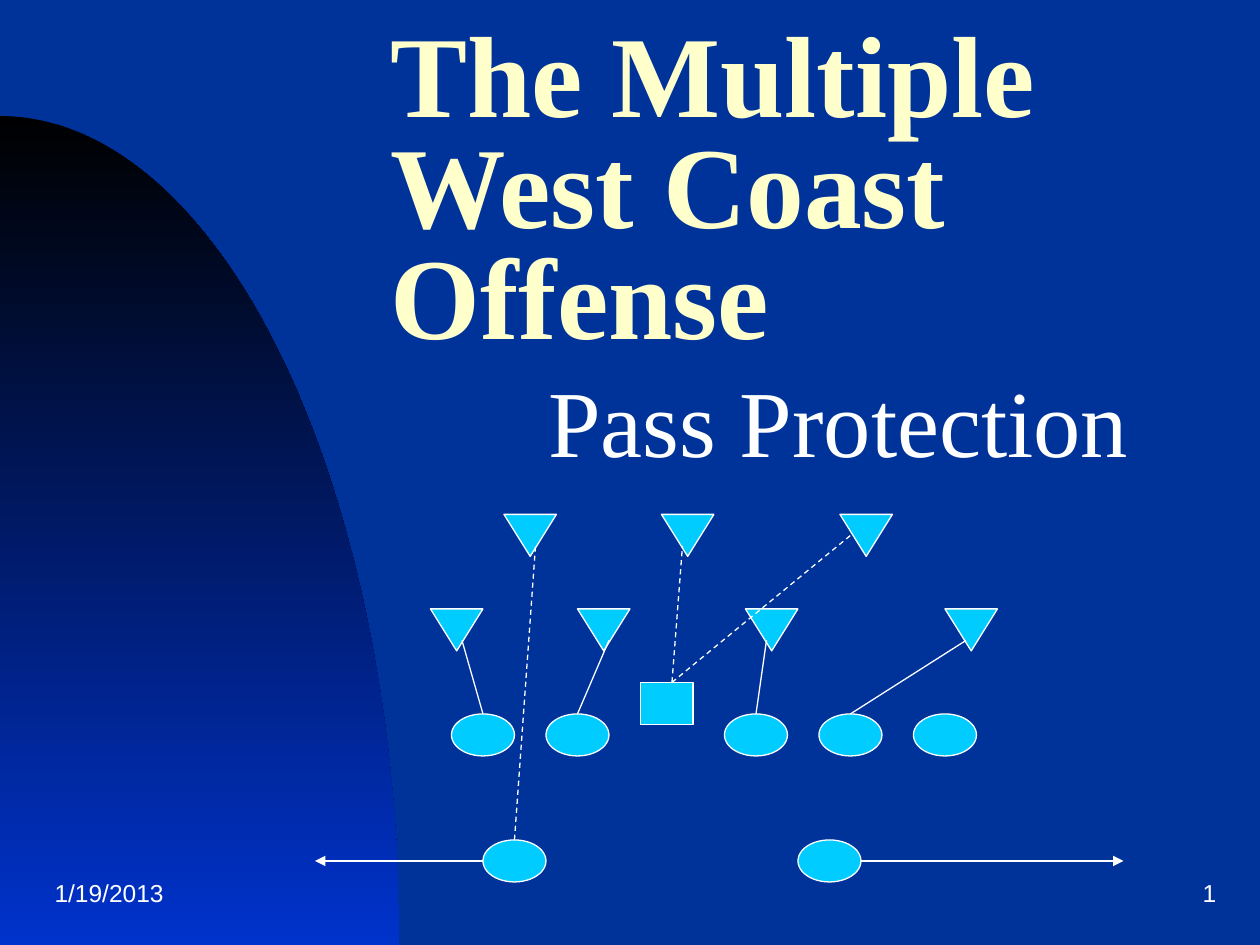
import dataclasses
import math

import pptx
import pptx.dml.color
import pptx.enum.dml
import pptx.enum.shapes
import pptx.enum.text
import pptx.oxml.ns
import pptx.util
from lxml import etree

Cm = pptx.util.Cm
Pt = pptx.util.Pt
Preset = pptx.enum.shapes.MSO_SHAPE
Align = pptx.enum.text.PP_ALIGN
Anchor = pptx.enum.text.MSO_ANCHOR
STEP = 2.54 / 12


@dataclasses.dataclass(frozen=True)
class Theme:
    """Colours, fonts and sizes of the deck."""
    background: str = "003399"
    glow_top: str = "000000"
    glow_bottom: str = "0033CC"
    title: str = "FFFFCC"
    text: str = "FFFFFF"
    player: str = "00CCFF"
    serif: str = "Times New Roman"
    sans: str = "Arial"
    title_size: float = 66
    subtitle_size: float = 54
    footer_size: float = 14
    thin: float = 0.75
    thick: float = 1.5


THEME = Theme()


def rgb(value):
    """Turn a hex string into a colour."""
    return pptx.dml.color.RGBColor.from_string(value)


def place(shape, box):
    """Move a shape to a box given in centimetres."""
    shape.left, shape.top, shape.width, shape.height = map(Cm, box)


def write(shape, text, font, size, color, align=Align.LEFT, anchor=Anchor.TOP, bold=False):
    """Write one formatted run and return its paragraph."""
    frame = shape.text_frame
    frame.word_wrap = True
    frame.auto_size = pptx.enum.text.MSO_AUTO_SIZE.NONE
    frame.vertical_anchor = anchor
    paragraph = frame.paragraphs[0]
    paragraph.alignment = align
    run = paragraph.add_run()
    run.text = text
    run.font.name, run.font.size, run.font.bold = font, Pt(size), bold
    run.font.color.rgb = rgb(color)
    return paragraph


def add_glow(slide, box, segments=90):
    """Draw the quarter ellipse with its vertical gradient."""
    left, top, width, height = box
    bottom = top + height
    angles = [math.pi / 2 * index / segments for index in range(segments + 1)]
    points = [(Cm(left + width * math.sin(angle)), Cm(bottom - height * math.cos(angle)))
              for angle in angles]
    builder = slide.shapes.build_freeform(*points[0])
    builder.add_line_segments(points[1:] + [(Cm(left), Cm(bottom))], close=True)
    glow = builder.convert_to_shape()
    glow.shadow.inherit = False
    glow.line.fill.background()
    glow.fill.gradient()
    glow.fill.gradient_angle = 270
    for stop, color in zip(glow.fill.gradient_stops, (THEME.glow_top, THEME.glow_bottom)):
        stop.color.rgb = rgb(color)


def add_headings(slide, title_box, subtitle_box):
    """Fill the title and subtitle placeholders."""
    title, subtitle = slide.shapes.title, slide.placeholders[1]
    place(title, title_box)
    place(subtitle, subtitle_box)
    paragraph = write(title, "The Multiple West Coast Offense", THEME.serif, THEME.title_size,
                      THEME.title, anchor=Anchor.BOTTOM, bold=True)
    paragraph.line_spacing = 0.8
    paragraph = write(subtitle, "Pass Protection", THEME.serif, THEME.subtitle_size, THEME.text)
    paragraph.space_before = Pt(THEME.subtitle_size * 0.2)


def add_footer(slide, box, width=5.29):
    """Put the date at the left of the box and the slide number at the right."""
    left, top, full_width, height = box
    for text, offset, align in (("1/19/2013", 0, Align.LEFT), ("1", full_width - width, Align.RIGHT)):
        label = slide.shapes.add_textbox(Cm(left + offset), Cm(top), Cm(width), Cm(height))
        write(label, text, THEME.sans, THEME.footer_size, THEME.text, align, Anchor.MIDDLE)


def add_player(slide, preset, origin, column, row):
    """Add one player at a grid position of the field."""
    columns = 6 if preset == Preset.OVAL else 5
    player = slide.shapes.add_shape(preset, 0, 0, 0, 0)
    place(player, (origin[0] + column * STEP, origin[1] + row * STEP, columns * STEP, 4 * STEP))
    player.shadow.inherit = False
    player.fill.solid()
    player.fill.fore_color.rgb = rgb(THEME.player)
    player.line.color.rgb = rgb(THEME.text)
    player.line.width = Pt(THEME.thin)
    if preset == Preset.ISOSCELES_TRIANGLE:
        player.element.spPr.find(pptx.oxml.ns.qn("a:xfrm")).set("flipV", "1")
    return player


def add_route(slide, origin, start, end, blocker=None, dashed=False, arrow=False):
    """Add an assignment line between two grid positions of the field."""
    ends = [Cm(origin[axis] + point[axis] * STEP) for point in (start, end) for axis in (0, 1)]
    route = slide.shapes.add_connector(pptx.enum.shapes.MSO_CONNECTOR.STRAIGHT, *ends)
    if blocker is not None:
        route.begin_connect(blocker, 0)
    route.line.color.rgb = rgb(THEME.text)
    route.line.width = Pt(THEME.thick if arrow else THEME.thin)
    if dashed:
        route.line.dash_style = pptx.enum.dml.MSO_LINE.DASH
    if arrow:
        tail = etree.SubElement(route.line._get_or_add_ln(), pptx.oxml.ns.qn("a:tailEnd"))
        tail.set("type", "triangle")
    etree.SubElement(route.element.spPr, pptx.oxml.ns.qn("a:effectLst"))


def add_play(slide, origin):
    """Draw the pass protection diagram from its top left corner."""
    rows = (
        (Preset.ISOSCELES_TRIANGLE, 0, (18, 33, 50)),
        (Preset.ISOSCELES_TRIANGLE, 9, (11, 25, 41, 60)),
        (Preset.RECTANGLE, 16, (31,)),
        (Preset.OVAL, 19, (13, 22, 39, 48, 57)),
        (Preset.OVAL, 31, (16, 46)),
    )
    players = [[add_player(slide, preset, origin, column, row) for column in columns]
               for preset, row, columns in rows]
    linemen, backs = players[3:]
    for lineman, column, target in zip(linemen, rows[3][2], (14, 28, 43, 62)):
        add_route(slide, origin, (column + 3, 19), (target, 12), lineman)
    for target in ((35, 3), (51, 2)):
        add_route(slide, origin, (34, 16), target, dashed=True)
    add_route(slide, origin, (19, 31), (21, 3), backs[0], dashed=True)
    for start, end in ((16, 0), (52, 77)):
        add_route(slide, origin, (start, 33), (end, 33), arrow=True)


def main():
    """Build and save the title slide."""
    presentation = pptx.Presentation()
    presentation.slide_width, presentation.slide_height = Cm(25.4), Cm(19.05)
    slide = presentation.slides.add_slide(presentation.slide_layouts[0])
    slide.background.fill.solid()
    slide.background.fill.fore_color.rgb = rgb(THEME.background)
    add_glow(slide, (0, 2.34, 8.05, 16.71))
    add_footer(slide, (0.85, 17.36, 23.92, 1.27))
    add_headings(slide, (7.62, 3.18, 17.78, 4.23), (10.8, 7.2, 12.7, 4.87))
    add_play(slide, (6.35, 10.37))
    presentation.save("out.pptx")


if __name__ == "__main__":
    main()
